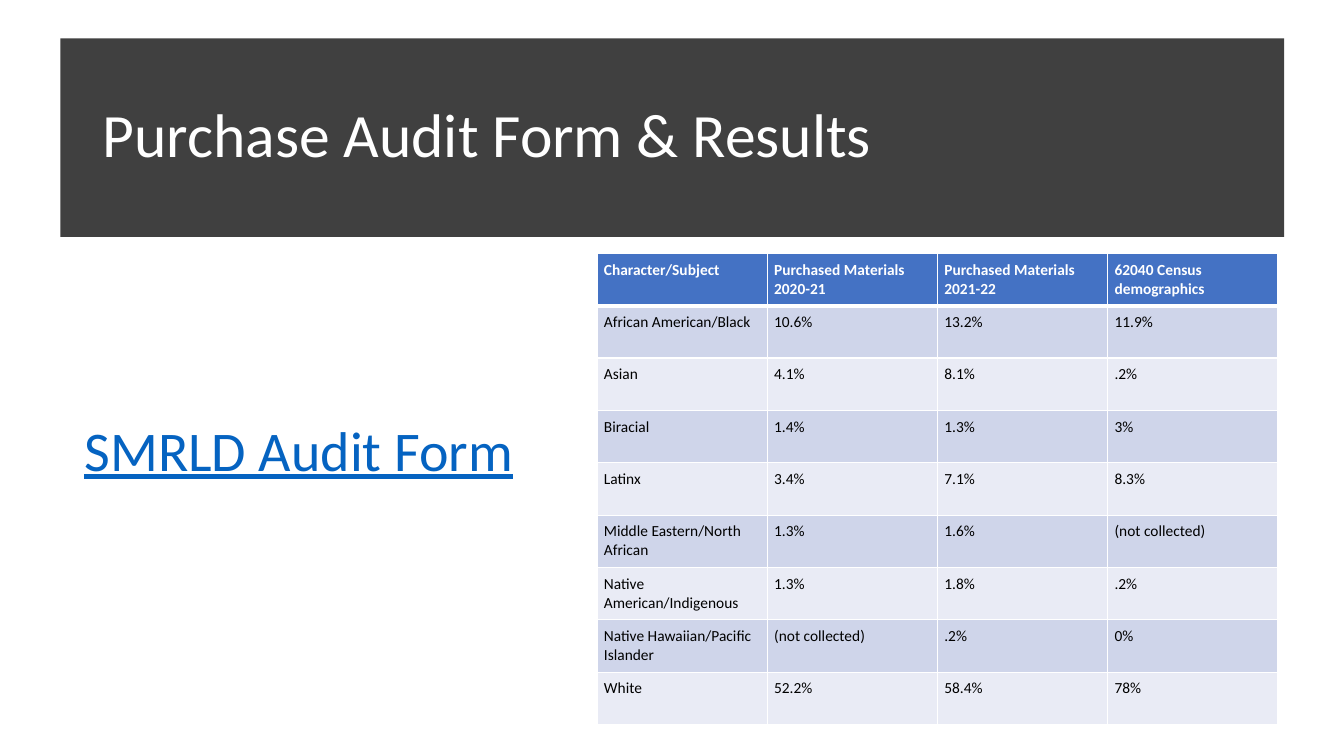
from lxml import etree
from pptx import Presentation
from pptx.dml.color import RGBColor
from pptx.enum.shapes import MSO_SHAPE
from pptx.enum.text import MSO_ANCHOR
from pptx.oxml.ns import qn
from pptx.util import Pt

RECT = MSO_SHAPE.RECTANGLE
MIDDLE = MSO_ANCHOR.MIDDLE
FONT = "Calibri"
HEADER_FILL, ODD_FILL, EVEN_FILL = "4472C4", "CFD5EA", "E9EBF5"
NOT_COLLECTED = "(not collected)"

ROWS = [
    ("Character/Subject", "Purchased Materials 2020-21",
     "Purchased Materials 2021-22", "62040 Census demographics"),
    ("African American/Black", "10.6%", "13.2%", "11.9%"),
    ("Asian", "4.1%", "8.1%", ".2%"),
    ("Biracial", "1.4%", "1.3%", "3%"),
    ("Latinx", "3.4%", "7.1%", "8.3%"),
    ("Middle Eastern/North African", "1.3%", "1.6%", NOT_COLLECTED),
    ("Native American/Indigenous", "1.3%", "1.8%", ".2%"),
    ("Native Hawaiian/Pacific Islander", NOT_COLLECTED, ".2%", "0%"),
    ("White", "52.2%", "58.4%", "78%"),
]


def rgb(color):
    return RGBColor.from_string(color)


def write(tf, text, size, color):
    tf.word_wrap = True
    p = tf.paragraphs[0]
    p.text = text
    p.font.name = FONT
    p.font.size = Pt(size)
    p.font.color.rgb = rgb(color)
    return p


prs = Presentation()
prs.slide_width, prs.slide_height = Pt(960), Pt(540)
s = prs.slides.add_slide(prs.slide_layouts[6])

banner = s.shapes.add_shape(RECT, Pt(43.2), Pt(27.4), Pt(874), Pt(141.8))
banner.shadow.inherit = False
banner.fill.solid()
banner.fill.fore_color.rgb = rgb("404040")
banner.line.fill.background()

title = s.shapes.add_textbox(Pt(66.2), Pt(46.1), Pt(828), Pt(104.4))
title.text_frame.vertical_anchor = MIDDLE
p = write(title.text_frame, "Purchase Audit Form & Results", 44, "FFFFFF")
p.line_spacing = 0.9

form = s.shapes.add_textbox(Pt(53.3), Pt(293), Pt(521.3), Pt(55.4))
p = write(form.text_frame, "SMRLD Audit Form", 40, "0563C1")
p.font.underline = True

frame = s.shapes.add_table(len(ROWS), len(ROWS[0]),
                           Pt(426.4), Pt(181), Pt(486.4), Pt(336.6))
table = frame.table
for col in table.columns:
    col.width = Pt(121.6)
for i, values in enumerate(ROWS):
    table.rows[i].height = Pt(37.4)
    header = i == 0
    fill = HEADER_FILL if header else ODD_FILL if i % 2 else EVEN_FILL
    for j, text in enumerate(values):
        cell = table.cell(i, j)
        cell.margin_left = cell.margin_right = Pt(5)
        cell.margin_top = cell.margin_bottom = Pt(5)
        p = write(cell.text_frame, text, 11, "FFFFFF" if header else "000000")
        p.font.bold = header
        tcPr = cell._tc.get_or_add_tcPr()
        for side in ("L", "R", "T", "B"):
            thick = (header and side == "B") or (i == 1 and side == "T")
            ln = etree.SubElement(tcPr, qn(f"a:ln{side}"),
                                  w=str(Pt(3 if thick else 1)))
            solid = etree.SubElement(ln, qn("a:solidFill"))
            etree.SubElement(solid, qn("a:srgbClr"), val="FFFFFF")
        cell.fill.solid()
        cell.fill.fore_color.rgb = rgb(fill)

prs.save("out.pptx")
